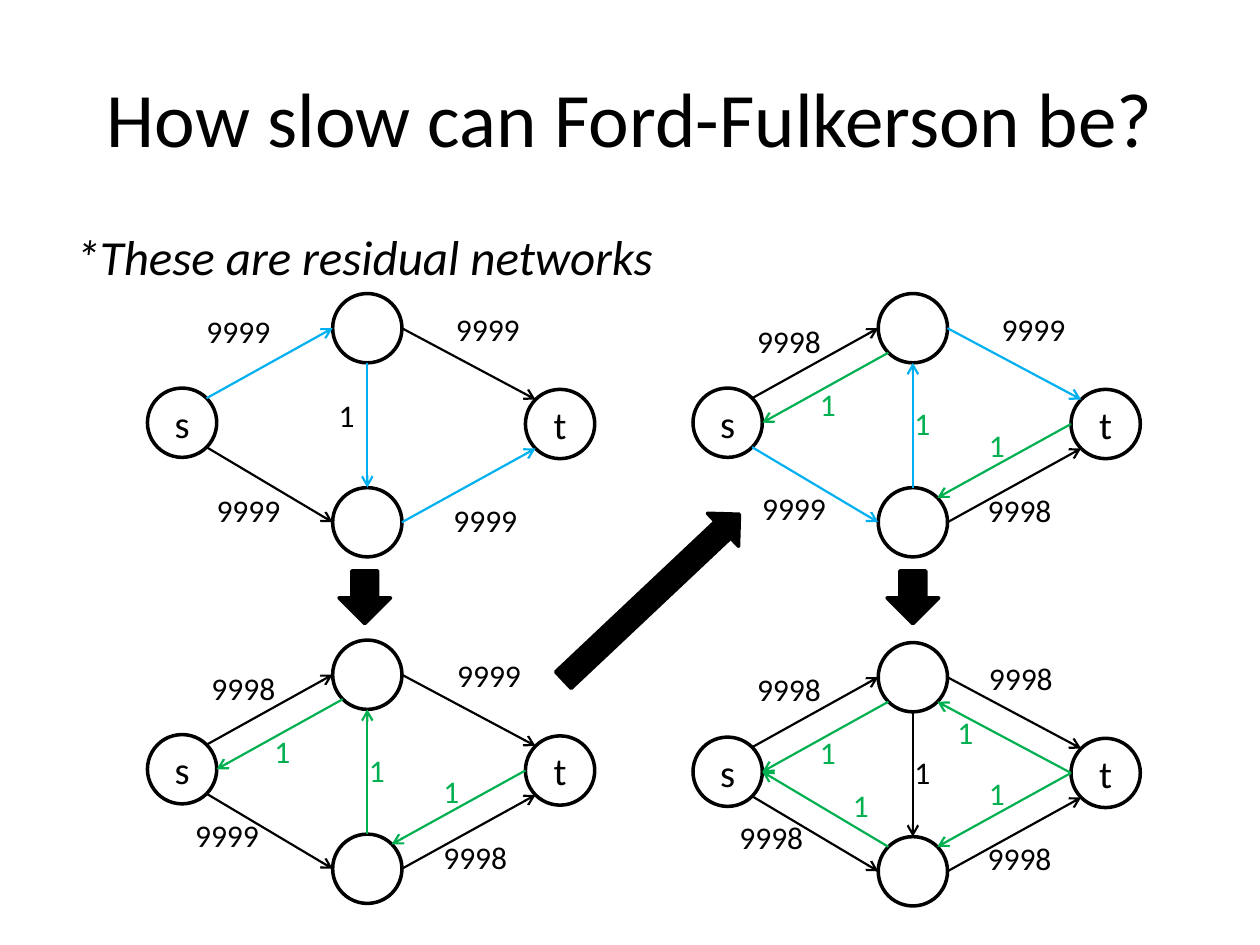
from lxml.etree import SubElement
from pptx import Presentation
from pptx.dml.color import RGBColor
from pptx.enum.shapes import MSO_CONNECTOR, MSO_SHAPE
from pptx.enum.text import MSO_ANCHOR, PP_ALIGN
from pptx.oxml.ns import qn
from pptx.util import Inches, Pt

BLACK = RGBColor(0x00, 0x00, 0x00)
BLUE = RGBColor(0x00, 0xB0, 0xF0)
GREEN = RGBColor(0x00, 0xB0, 0x50)
FONT = "Calibri"

TITLE = "How slow can Ford-Fulkerson be?"
NOTE = "*These are residual networks"

NODE_SIZE = 0.55
NODES = {
    "s": (0, 0.75, "s"),
    "u": (1.47, 0, ""),
    "v": (1.47, 1.54, ""),
    "t": (3, 0.76, "t"),
}
DIAGONAL = 0.707
SITES = {
    "N": (0, -1), "E": (1, 0), "S": (0, 1), "W": (-1, 0),
    "NE": (DIAGONAL, -DIAGONAL), "SE": (DIAGONAL, DIAGONAL),
    "SW": (-DIAGONAL, DIAGONAL), "NW": (-DIAGONAL, -DIAGONAL),
}
FORWARD = {"su": ("NE", "W"), "sv": ("SE", "W"), "uv": ("S", "N"),
           "ut": ("E", "NW"), "vt": ("E", "SW")}
BACKWARD = {"us": ("SW", "E"), "vs": ("NW", "E"), "vu": ("N", "S"),
            "tu": ("W", "SE"), "tv": ("W", "NE")}
ROUTES = FORWARD | BACKWARD

GRAPHS = [
    {"origin": (1.17, 2.33), "path_edges": ("su", "uv", "vt"), "edges": [
        ("su", "9999", 0.37, 0.1), ("sv", "9999", 0.45, 1.52),
        ("ut", "9999", 2.35, 0.08), ("vt", "9999", 2.33, 1.6),
        ("uv", "1", 1.42, 0.76)]},
    {"origin": (1.17, 5.08), "path_edges": (), "edges": [
        ("su", "9998", 0.41, 0.18), ("sv", "9999", 0.28, 1.35),
        ("ut", "9999", 2.36, 0.08), ("vt", "9998", 2.25, 1.52),
        ("vu", "1", 1.66, 0.83), ("us", "1", 0.91, 0.68),
        ("tv", "1", 2.25, 1)]},
    {"origin": (5.5, 2.33), "path_edges": ("sv", "vu", "ut"), "edges": [
        ("su", "9998", 0.41, 0.18), ("sv", "9999", 0.45, 1.5),
        ("ut", "9999", 2.35, 0.08), ("vt", "9998", 2.24, 1.52),
        ("vu", "1", 1.66, 0.83), ("us", "1", 0.91, 0.68),
        ("tv", "1", 2.25, 1)]},
    {"origin": (5.5, 5.1), "path_edges": (), "edges": [
        ("su", "9998", 0.41, 0.17), ("sv", "9998", 0.27, 1.34),
        ("ut", "9998", 2.25, 0.08), ("vt", "9998", 2.24, 1.51),
        ("uv", "1", 1.66, 0.83), ("us", "1", 0.91, 0.67),
        ("tv", "1", 2.25, 0.99), ("vs", "1", 1.17, 1.09),
        ("tu", "1", 2, 0.51)]},
]
STEP_ARROWS = [
    (MSO_SHAPE.DOWN_ARROW, (2.69, 4.53, 0.41, 0.42), 0),
    (MSO_SHAPE.DOWN_ARROW, (7.04, 4.53, 0.41, 0.42), 0),
    (MSO_SHAPE.RIGHT_ARROW, (4.21, 4.56, 1.92, 0.36), 316.7),
]


def place(sp, left, top, width, height):
    sp.left, sp.top = Inches(left), Inches(top)
    sp.width, sp.height = Inches(width), Inches(height)


def write(sp, text, size, color=BLACK, align=None):
    p = sp.text_frame.paragraphs[0]
    p.text = text
    p.alignment = align
    p.font.name, p.font.size = FONT, Pt(size)
    p.font.color.rgb = color
    return p


def add_outlined(shapes, kind, box):
    sp = shapes.add_shape(kind, *map(Inches, box))
    sp.shadow.inherit = False
    sp.line.color.rgb = BLACK
    sp.line.width = Pt(2)
    return sp


def add_node(shapes, left, top, name):
    sp = add_outlined(shapes, MSO_SHAPE.OVAL, (left, top, NODE_SIZE, NODE_SIZE))
    sp.fill.background()
    if name:
        sp.text_frame.vertical_anchor = MSO_ANCHOR.MIDDLE
        write(sp, name, 22, align=PP_ALIGN.CENTER)


def site_point(origin, node, site):
    return [Inches(o + n + NODE_SIZE / 2 * (1 + d))
            for o, n, d in zip(origin, NODES[node], SITES[site])]


def add_edge(shapes, origin, route, color):
    start, end = (site_point(origin, node, site)
                  for node, site in zip(route, ROUTES[route]))
    line = shapes.add_connector(MSO_CONNECTOR.STRAIGHT, *start, *end)
    line.line.color.rgb = color
    line.line.width = Pt(1.25)
    SubElement(line.line._get_or_add_ln(), qn("a:tailEnd"), type="arrow")
    SubElement(line._element.spPr, qn("a:effectLst"))


def add_label(shapes, left, top, text, color):
    width = 0.71 if len(text) > 1 else 0.33
    sp = shapes.add_textbox(*map(Inches, (left, top, width, 0.4)))
    sp.text_frame.word_wrap = False
    write(sp, text, 18, color)


def add_graph(s, graph):
    shapes = s.shapes.add_group_shape().shapes
    x, y = origin = graph["origin"]
    for dx, dy, name in NODES.values():
        add_node(shapes, x + dx, y + dy, name)
    for route, text, dx, dy in graph["edges"]:
        color = BLACK if route in FORWARD else GREEN
        on_path = route in graph["path_edges"]
        add_edge(shapes, origin, route, BLUE if on_path else color)
        add_label(shapes, x + dx, y + dy, text, color)


def main():
    prs = Presentation()
    prs.slide_width, prs.slide_height = Inches(10), Inches(7.5)
    s = prs.slides.add_slide(prs.slide_layouts[1])
    title, body = s.placeholders

    place(title, 0.5, 0.3, 9, 1.25)
    write(title, TITLE, 44, align=PP_ALIGN.CENTER)
    place(body, 0.5, 1.75, 9, 0.58)
    p = write(body, NOTE, 28)
    p.font.italic = True
    pPr = p._p.get_or_add_pPr()
    pPr.set("marL", "0")
    pPr.set("indent", "0")
    pPr.insert_element_before(pPr.makeelement(qn("a:buNone")), "a:defRPr")

    for graph in GRAPHS:
        add_graph(s, graph)
    for kind, box, rotation in STEP_ARROWS:
        sp = add_outlined(s.shapes, kind, box)
        sp.fill.solid()
        sp.fill.fore_color.rgb = BLACK
        sp.rotation = rotation
    prs.save("out.pptx")


if __name__ == "__main__":
    main()
